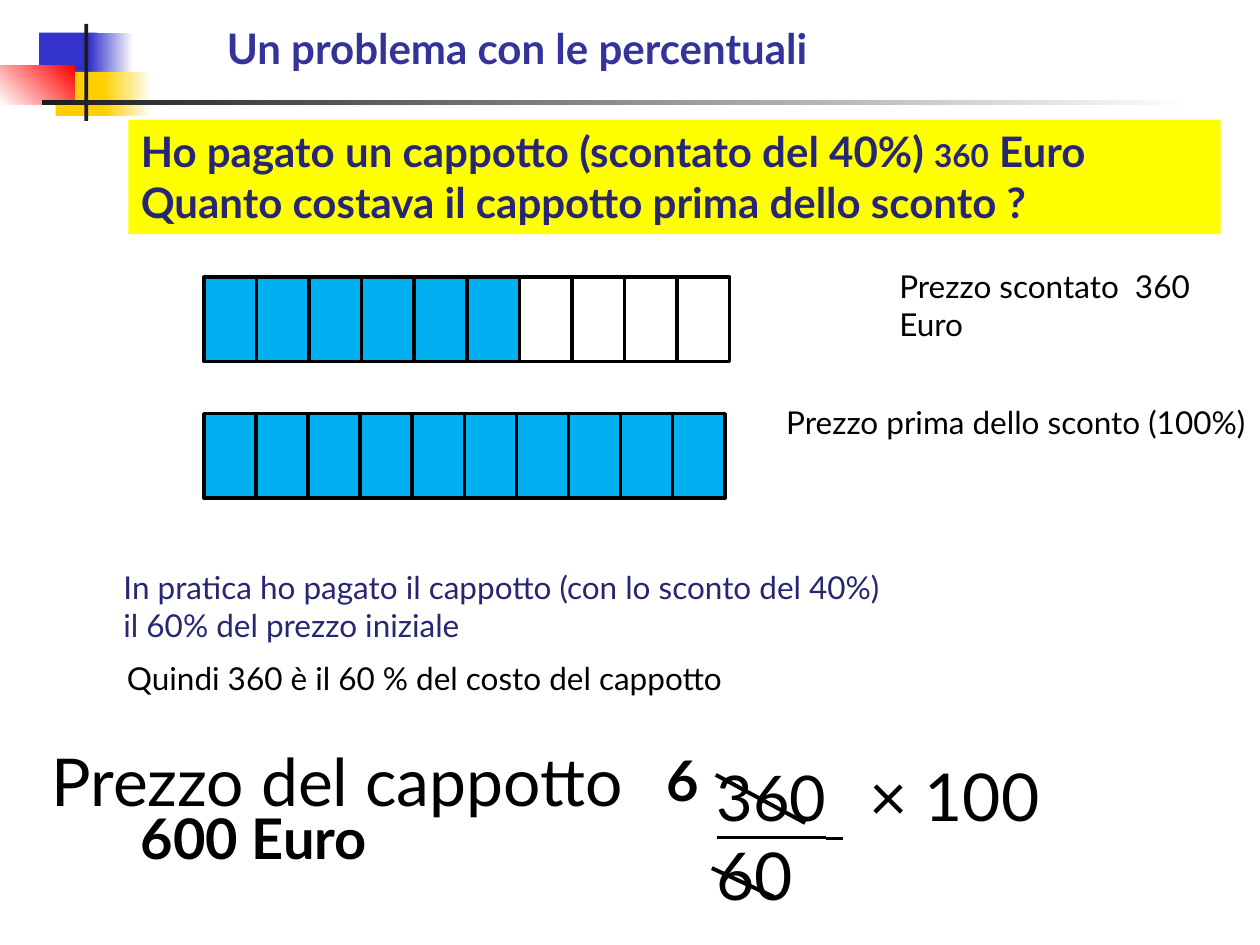
"""Build the slide about a percentage problem."""
from dataclasses import dataclass
from typing import Optional

from lxml import etree
from pptx import Presentation
from pptx import util as u
from pptx.dml.color import RGBColor
from pptx.enum import shapes, text
from pptx.oxml.ns import qn

FONT = "Lato"
BLACK, WHITE, NAVY, CYAN = "000000", "FFFFFF", "262673", "00B0F0"


@dataclass
class Area:
    left: float
    top: float
    width: float
    height: float


@dataclass
class Block:
    area: Area
    start: str
    end: Optional[str] = None
    angle: float = 0


@dataclass
class Bar:
    top: float
    step: float
    filled: int


@dataclass
class Label:
    area: Area
    lines: list
    size: float = 18
    color: str = BLACK
    bold: bool = False


@dataclass
class Strike:
    x1: float
    y1: float
    x2: float
    y2: float


BLOCKS = [
    Block(Area(0.79, 0.66, 1.17, 0.89), "3333CC"),
    Block(Area(1.8, 0.66, 0.89, 0.89), "3333CC", WHITE),
    Block(Area(1.12, 1.45, 1.12, 0.89), "FFCF01"),
    Block(Area(2.08, 1.45, 0.99, 0.89), "FFCF01", WHITE),
    Block(Area(0, 1.32, 1.5, 0.79), WHITE, "FF0000", 45),
    Block(Area(1.7, 0.48, 0.08, 1.96), "1C1C1C"),
    Block(Area(0.84, 2.01, 23.24, 0.1), "1C1C1C", WHITE),
]
BARS = [Bar(5.59, 1.06, 6), Bar(8.34, 1.05, 10)]
LABELS = [
    Label(Area(15.6, 8, 10.01, 2.31), ["Prezzo prima dello sconto (100%)"]),
    Label(Area(17.88, 5.26, 6.38, 2.31), ["Prezzo scontato  360 Euro"]),
    Label(Area(2.31, 13.16, 20.65, 1.27), ["Quindi 360 è il 60 % del costo del cappotto"]),
    Label(Area(2.24, 11.33, 22.02, 2.31),
          ["In pratica ho pagato il cappotto (con lo sconto del 40%)",
           "il 60% del prezzo iniziale"], color=NAVY),
    Label(Area(0.79, 14.81, 17.96, 1.88), ["Prezzo del cappotto"], 37.7),
    Label(Area(2.59, 16.08, 8.2, 1.63), ["600 Euro"], 32, bold=True),
    Label(Area(13.18, 14.91, 1.75, 1.63), ["6"], 32, bold=True),
]
STRIKES = [Strike(14.43, 15.62, 16.23, 16.59), Strike(14.35, 17.5, 15.6, 18.08)]


def rgb(color: str) -> RGBColor:
    return RGBColor.from_string(color)


def place(area: Area) -> list:
    return [u.Cm(value) for value in (area.left, area.top, area.width, area.height)]


def write(para, words: str, *, size: float = 18, color: str = BLACK,
          bold: bool = False, underline: bool = False) -> None:
    span = para.add_run()
    span.text = words
    font = span.font
    font.name, font.size, font.bold = FONT, u.Pt(size), bold
    font.underline = underline
    font.color.rgb = rgb(color)


def add_box(page, area: Area):
    box = page.shapes.add_textbox(*place(area))
    box.text_frame.word_wrap = True
    return box


def add_rectangle(page, area: Area, color: str):
    box = page.shapes.add_shape(shapes.MSO_SHAPE.RECTANGLE, *place(area))
    box.shadow.inherit = False
    box.fill.solid()
    box.fill.fore_color.rgb = rgb(color)
    box.line.fill.background()
    return box


def draw_block(page, block: Block) -> None:
    box = add_rectangle(page, block.area, block.start)
    if block.end:
        box.fill.gradient()
        box.fill.gradient_angle = block.angle
        for stop, color in zip(box.fill.gradient_stops, (block.start, block.end)):
            stop.color.rgb = rgb(color)


def draw_bar(page, bar: Bar) -> None:
    for index in range(10):
        area = Area(4.11 + index * bar.step, bar.top, 1.06, 1.7)
        box = add_rectangle(page, area, CYAN if index < bar.filled else WHITE)
        box.line.color.rgb = rgb(BLACK)
        box.line.width = u.Pt(2)


def draw_label(page, label: Label) -> None:
    frame = add_box(page, label.area).text_frame
    for index, line in enumerate(label.lines):
        para = frame.add_paragraph() if index else frame.paragraphs[0]
        write(para, line, size=label.size, color=label.color, bold=label.bold)


def draw_strike(page, strike: Strike) -> None:
    ends = [u.Cm(value) for value in (strike.x1, strike.y1, strike.x2, strike.y2)]
    line = page.shapes.add_connector(shapes.MSO_CONNECTOR.STRAIGHT, *ends)
    line.line.color.rgb = rgb(BLACK)
    line.line.width = u.Pt(2.25)
    etree.SubElement(line._element.spPr, qn("a:effectLst"))


def draw_title(page) -> None:
    title = page.shapes.title
    title.left, title.top, title.width, title.height = place(Area(4.32, 0.33, 17.37, 2.31))
    frame = title.text_frame
    frame.vertical_anchor = text.MSO_ANCHOR.TOP
    frame.auto_size = text.MSO_AUTO_SIZE.NONE
    para = frame.paragraphs[0]
    para.alignment = text.PP_ALIGN.LEFT
    write(para, "Un problema con le percentuali", size=24, color="333399", bold=True)


def draw_question(page) -> None:
    box = add_rectangle(page, Area(2.59, 2.41, 22.02, 2.31), "FFFF00")
    frame = box.text_frame
    frame.vertical_anchor = text.MSO_ANCHOR.TOP
    first, second = frame.paragraphs[0], frame.add_paragraph()
    for para, words, size in (
        (first, "Ho pagato un cappotto (scontato del 40%) ", 24),
        (first, "360", 18),
        (first, " Euro", 24),
        (second, "Quanto costava il cappotto prima dello sconto ?", 24),
    ):
        para.alignment = text.PP_ALIGN.LEFT
        write(para, words, size=size, color=NAVY, bold=True)


def draw_fraction(page) -> None:
    frame = add_box(page, Area(14.2, 15.11, 17.45, 3.48)).text_frame
    top, bottom = frame.paragraphs[0], frame.add_paragraph()
    stops = etree.SubElement(top._p.get_or_add_pPr(), qn("a:tabLst"))
    etree.SubElement(stops, qn("a:tab"), pos=str(u.Cm(3.08)), algn="l")
    write(top, "360", size=36, underline=True)
    write(top, " ", size=37.7, underline=True)
    write(top, "\t× 100", size=37.7)
    write(bottom, "60", size=37.7)


def main() -> None:
    deck = Presentation()
    deck.slide_width, deck.slide_height = u.Cm(25.4), u.Cm(19.05)
    page = deck.slides.add_slide(deck.slide_layouts[5])
    draw_question(page)
    for bar in BARS:
        draw_bar(page, bar)
    for block in BLOCKS:
        draw_block(page, block)
    draw_title(page)
    for label in LABELS:
        draw_label(page, label)
    draw_fraction(page)
    for strike in STRIKES:
        draw_strike(page, strike)
    deck.save("out.pptx")


if __name__ == "__main__":
    main()
